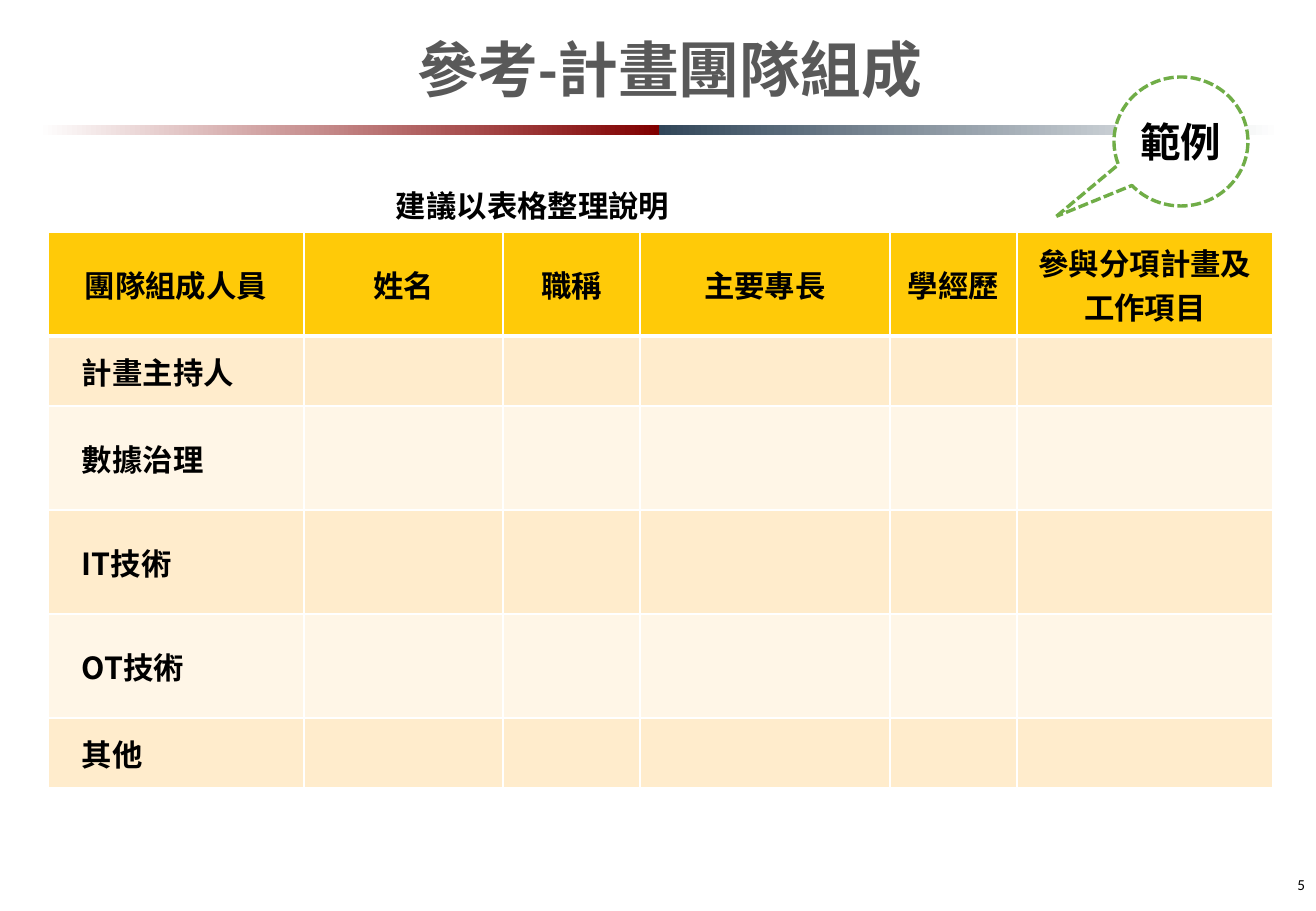
import pptx
import pptx.dml.color
import pptx.enum.dml
import pptx.enum.shapes
import pptx.enum.text
import pptx.oxml.ns
import pptx.util
from lxml import etree

SCALE = 7526  # EMU per px
RGB = pptx.dml.color.RGBColor
WHITE = RGB(0xFF, 0xFF, 0xFF)
BLACK = RGB(0x00, 0x00, 0x00)
GREY = RGB(0x59, 0x59, 0x59)
MAROON = RGB(0x80, 0x00, 0x00)
NAVY = RGB(0x31, 0x46, 0x59)
GREEN = RGB(0x70, 0xAD, 0x47)
GOLD = RGB(0xFF, 0xCA, 0x08)
PEACH = RGB(0xFF, 0xEC, 0xCC)
CREAM = RGB(0xFF, 0xF6, 0xE7)
CJK = "Noto Sans CJK SC"
LATIN = "Calibri"
SHAPE = pptx.enum.shapes.MSO_SHAPE
ALIGN = pptx.enum.text.PP_ALIGN
ANCHOR = pptx.enum.text.MSO_ANCHOR
qn = pptx.oxml.ns.qn

HEADERS = [["團隊組成人員"], ["姓名"], ["職稱"], ["主要專長"], ["學經歷"],
           ["參與分項計畫及", "工作項目"]]
MEMBERS = ["計畫主持人", "數據治理", "IT技術", "OT技術", "其他"]
COLUMN_WIDTHS = [256, 199, 137, 250, 127, 256]
ROW_HEIGHTS = [104, 70, 104, 104, 104, 70]


def px(length):
    return pptx.util.Emu(length * SCALE)


def place(box):
    return [px(length) for length in box]


def write(frame, lines, size, font=CJK, color=BLACK, bold=True, align=ALIGN.LEFT):
    for index, line in enumerate(lines):
        para = frame.add_paragraph() if index else frame.paragraphs[0]
        para.alignment = align
        span = para.add_run()
        span.text = line
        span.font.size = pptx.util.Pt(size)
        span.font.name = font
        span.font.bold = bold
        span.font.color.rgb = color
        east_asian = etree.SubElement(span.font._element, qn("a:ea"))
        east_asian.set("typeface", CJK)


def add_text(page, box, line, size, anchor=ANCHOR.TOP, **style):
    frame = page.shapes.add_textbox(*place(box)).text_frame
    frame.word_wrap = True
    frame.vertical_anchor = anchor
    write(frame, [line], size, **style)


def add_divider(page, box):
    """Two gradient bars that fade outwards from a shared middle."""
    left, top, width, height = box
    half = width // 2
    for start, colors in ((left, (WHITE, MAROON)), (left + half, (NAVY, WHITE))):
        bar = page.shapes.add_shape(SHAPE.RECTANGLE, *place((start, top, half, height)))
        bar.shadow.inherit = False
        bar.line.fill.background()
        bar.fill.gradient()
        bar.fill.gradient_angle = 0
        for stop, color, position in zip(bar.fill.gradient_stops, colors, (0, 1)):
            stop.color.rgb = color
            stop.position = position


def add_callout(page, box):
    callout = page.shapes.add_shape(SHAPE.OVAL_CALLOUT, *place(box))
    callout.shadow.inherit = False
    callout.adjustments[0] = -0.93
    callout.adjustments[1] = 0.58
    callout.fill.solid()
    callout.fill.fore_color.rgb = WHITE
    callout.line.color.rgb = GREEN
    callout.line.width = pptx.util.Pt(2)
    callout.line.dash_style = pptx.enum.dml.MSO_LINE.SQUARE_DOT
    frame = callout.text_frame
    frame.vertical_anchor = ANCHOR.MIDDLE
    frame.margin_left = frame.margin_right = px(2)
    frame.margin_top = frame.margin_bottom = px(1)
    write(frame, ["範例"], 24, align=ALIGN.CENTER)


def set_borders(cell, top, bottom):
    properties = cell._tc.get_or_add_tcPr()
    for side, points in (("L", 1), ("R", 1), ("T", top), ("B", bottom)):
        line = etree.SubElement(properties, qn("a:ln" + side))
        line.set("w", str(pptx.util.Pt(points)))
        fill = etree.SubElement(line, qn("a:solidFill"))
        etree.SubElement(fill, qn("a:srgbClr")).set("val", str(WHITE))


def add_team_table(page, left, top):
    box = (left, top, sum(COLUMN_WIDTHS), sum(ROW_HEIGHTS))
    table = page.shapes.add_table(
        len(ROW_HEIGHTS), len(COLUMN_WIDTHS), *place(box)).table
    for column, width in zip(table.columns, COLUMN_WIDTHS):
        column.width = px(width)
    for row, height in zip(table.rows, ROW_HEIGHTS):
        row.height = px(height)

    # Header row, then member names in the first column
    blanks = [[]] * (len(HEADERS) - 1)
    content = [HEADERS] + [[[member]] + blanks for member in MEMBERS]
    for row_index, row in enumerate(content):
        header = row_index == 0
        color = GOLD if header else PEACH if row_index % 2 else CREAM
        for column_index, lines in enumerate(row):
            cell = table.cell(row_index, column_index)
            set_borders(cell, 3 if row_index == 1 else 1, 3 if header else 1)
            cell.fill.solid()
            cell.fill.fore_color.rgb = color
            if lines:
                cell.vertical_anchor = ANCHOR.MIDDLE
                cell.margin_left = px(2 if header else 34)
                cell.margin_right = px(2)
                cell.margin_top = cell.margin_bottom = 0
                write(cell.text_frame, lines, 18,
                      align=ALIGN.CENTER if header else ALIGN.LEFT)


def build_team_page(page):
    add_divider(page, (38, 125, 1242, 10))
    add_text(page, (1020, 860, 297, 49), "5", 9, anchor=ANCHOR.MIDDLE,
             font=LATIN, bold=False, align=ALIGN.RIGHT)
    add_text(page, (158, 26, 1023, 110), "參考-計畫團隊組成", 36,
             font=LATIN, color=GREY, align=ALIGN.CENTER)
    add_callout(page, (1114, 77, 134, 129))
    add_team_table(page, 48, 232)
    add_text(page, (384, 181, 960, 49), "建議以表格整理說明", 18)


def main():
    deck = pptx.Presentation()
    deck.slide_width, deck.slide_height = px(1316), px(911)
    build_team_page(deck.slides.add_slide(deck.slide_layouts[6]))
    deck.save("out.pptx")


if __name__ == "__main__":
    main()
